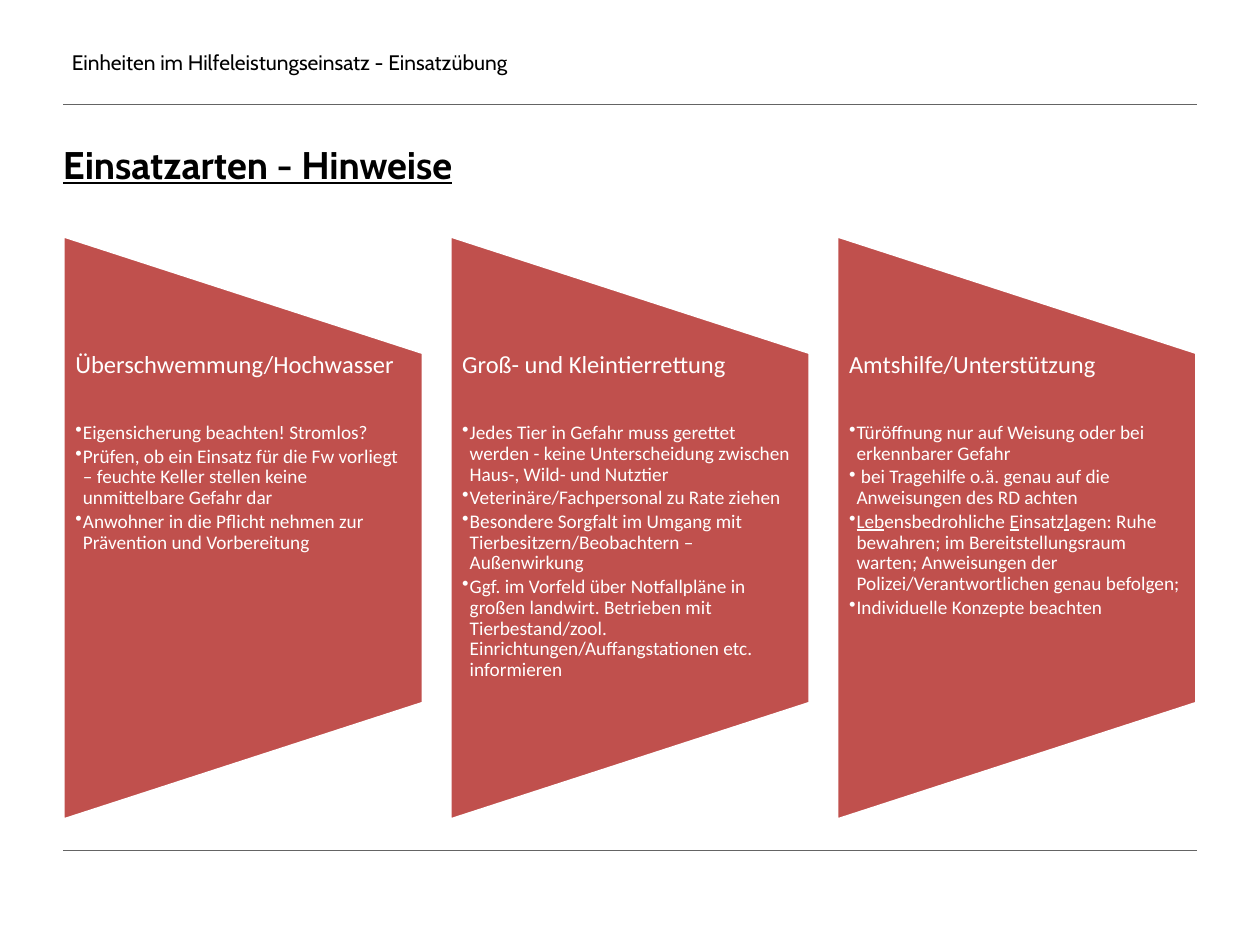
from dataclasses import dataclass

from lxml.etree import SubElement
from pptx import Presentation
from pptx.dml.color import RGBColor
from pptx.enum.shapes import MSO_CONNECTOR, MSO_SHAPE
from pptx.enum.text import MSO_ANCHOR
from pptx.oxml.ns import qn
from pptx.util import Inches, Pt

BLACK = RGBColor(0x00, 0x00, 0x00)
WHITE = RGBColor(0xFF, 0xFF, 0xFF)
RED = RGBColor(0xC0, 0x50, 0x4D)
GREY = RGBColor(0x64, 0x64, 0x64)

# Grid in inches: three columns between the side margins
SLIDE_W, SLIDE_H = 10, 7.5
MARGIN = 0.05 * SLIDE_W
COL_W, COL_STEP = 2.86, 3.07
PANEL_TOP, PANEL_H = 1.87, 4.64
TEXT_TOP, TEXT_H = PANEL_TOP + PANEL_H / 5, PANEL_H * 3 / 5
INDENT = 0.06

HEADER = {"name": "Cabin", "size": Pt(12)}
TITLE = {"name": "Cabin", "size": Pt(22), "bold": True, "underline": True}
HEADING = {"name": "Calibri", "size": Pt(14)}
BULLET = {"name": "Calibri", "size": Pt(11)}


@dataclass
class Panel:
    heading: str
    bullets: list[str]  # text between underscores is underlined


PANELS = [
    Panel("Überschwemmung/Hochwasser", [
        "Eigensicherung beachten! Stromlos?",
        "Prüfen, ob ein Einsatz für die Fw vorliegt – feuchte Keller stellen "
        "keine unmittelbare Gefahr dar",
        "Anwohner in die Pflicht nehmen zur Prävention und Vorbereitung",
    ]),
    Panel("Groß- und Kleintierrettung", [
        "Jedes Tier in Gefahr muss gerettet werden - keine Unterscheidung "
        "zwischen Haus-, Wild- und Nutztier",
        "Veterinäre/Fachpersonal zu Rate ziehen",
        "Besondere Sorgfalt im Umgang mit Tierbesitzern/Beobachtern – "
        "Außenwirkung",
        "Ggf. im Vorfeld über Notfallpläne in großen landwirt. Betrieben mit "
        "Tierbestand/zool. Einrichtungen/Auffangstationen etc. informieren",
    ]),
    Panel("Amtshilfe/Unterstützung", [
        "Türöffnung nur auf Weisung oder bei erkennbarer Gefahr",
        " bei Tragehilfe o.ä. genau auf die Anweisungen des RD achten",
        "_Leb_ensbedrohliche _E_insatz_l_agen: Ruhe bewahren; im "
        "Bereitstellungsraum warten; Anweisungen der "
        "Polizei/Verantwortlichen genau befolgen;",
        "Individuelle Konzepte beachten",
    ]),
]


def add_run(p, text: str, fmt: dict, color: RGBColor) -> None:
    r = p.add_run()
    r.text = text
    for key, value in fmt.items():
        setattr(r.font, key, value)
    r.font.color.rgb = color


def add_text_box(slide, x: float, y: float, w: float, h: float,
                 left: float = 0, right: float = 0, anchor=MSO_ANCHOR.TOP):
    tf = slide.shapes.add_textbox(*map(Inches, (x, y, w, h))).text_frame
    frame = {"word_wrap": True, "vertical_anchor": anchor,
             "margin_left": Inches(left), "margin_right": Inches(right),
             "margin_top": 0, "margin_bottom": 0}
    for key, value in frame.items():
        setattr(tf, key, value)
    return tf


def add_rule(slide, y: float) -> None:
    ends = (MARGIN, y, SLIDE_W - MARGIN, y)
    line = slide.shapes.add_connector(MSO_CONNECTOR.STRAIGHT, *map(Inches, ends))
    line.line.color.rgb = GREY
    line.line.width = Pt(0.25)
    SubElement(line._element.spPr, qn("a:effectLst"))


def add_bullet(tf, text: str) -> None:
    p = tf.add_paragraph()
    p.level = 1
    pPr = p._p.get_or_add_pPr()
    pPr.set("marL", str(Inches(INDENT)))
    pPr.set("indent", str(-Inches(INDENT)))
    SubElement(pPr, qn("a:buChar")).set("char", "•")
    p.line_spacing = 0.9
    p.space_after = Pt(1.65)
    for i, part in enumerate(text.split("_")):
        if part:
            add_run(p, part, {**BULLET, "underline": i % 2 == 1}, WHITE)


def add_panel(slide, col: int, panel: Panel) -> None:
    x = MARGIN + col * COL_STEP
    # Turned by 270°, so width and height swap around the centre
    sp = slide.shapes.add_shape(
        MSO_SHAPE.FLOWCHART_MANUAL_OPERATION,
        *map(Inches, (x + (COL_W - PANEL_H) / 2,
                      PANEL_TOP + (PANEL_H - COL_W) / 2, PANEL_H, COL_W)))
    sp.rotation = 270
    sp.shadow.inherit = False
    sp.fill.solid()
    sp.fill.fore_color.rgb = RED
    sp.line.color.rgb = WHITE
    sp.line.width = Pt(2)

    tf = add_text_box(slide, x, TEXT_TOP, COL_W, TEXT_H, left=0.1, right=0.1)
    p = tf.paragraphs[0]
    p.line_spacing = 0.9
    p.space_after = Pt(25)
    add_run(p, panel.heading, HEADING, WHITE)
    for text in panel.bullets:
        add_bullet(tf, text)


def main() -> None:
    prs = Presentation()
    prs.slide_width, prs.slide_height = Inches(SLIDE_W), Inches(SLIDE_H)
    slide = prs.slides.add_slide(prs.slide_layouts[6])

    # Header and rules
    add_rule(slide, 0.83)
    tf = add_text_box(slide, MARGIN, 0.33, 6.08, 0.33, left=0.07,
                      anchor=MSO_ANCHOR.MIDDLE)
    add_run(tf.paragraphs[0], "Einheiten im Hilfeleistungseinsatz - Einsatzübung",
            HEADER, BLACK)
    add_rule(slide, 0.9 * SLIDE_H)

    # Three panels
    for col, panel in enumerate(PANELS):
        add_panel(slide, col, panel)

    # Title
    p = add_text_box(slide, MARGIN, 1.15, 7.17, 1.1).paragraphs[0]
    p.line_spacing = Pt(24)
    add_run(p, "Einsatzarten - Hinweise", TITLE, BLACK)

    prs.save("out.pptx")


if __name__ == "__main__":
    main()
